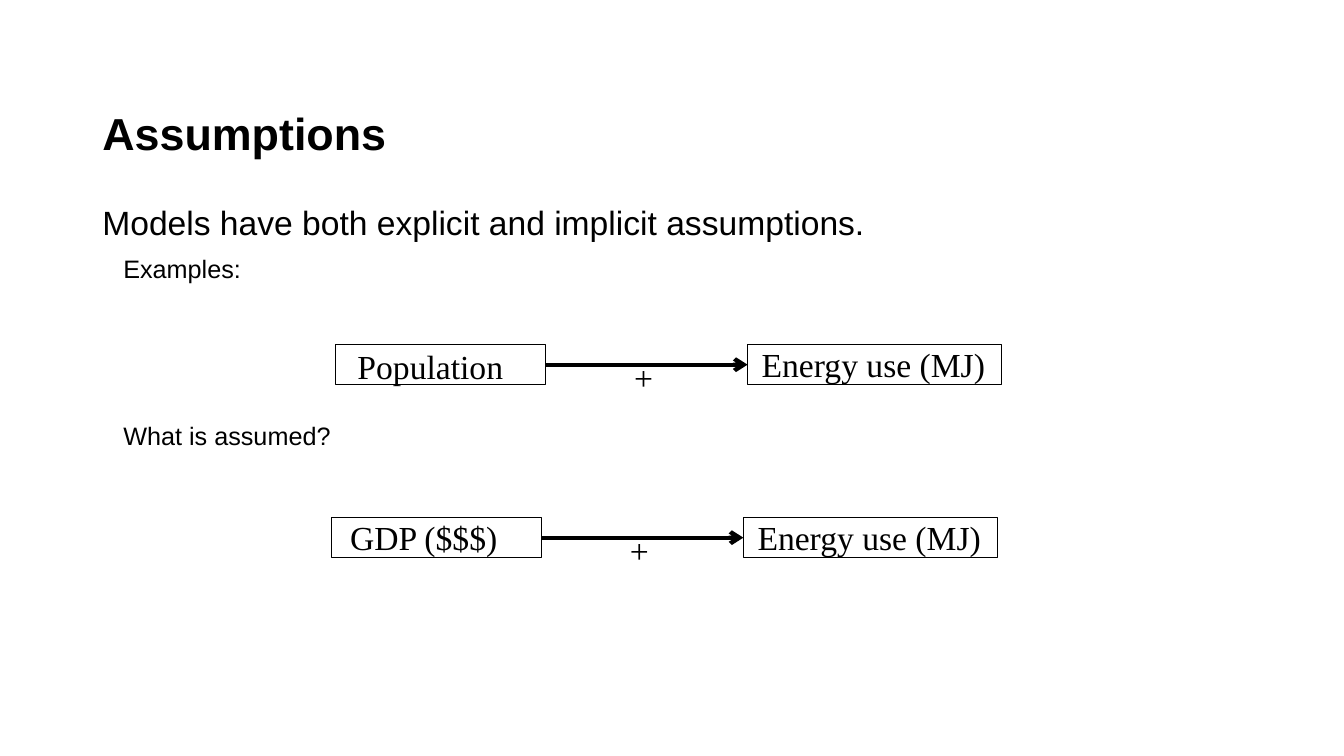
import pptx
import pptx.dml.color
import pptx.enum.shapes
import pptx.enum.text
import pptx.oxml
import pptx.oxml.ns
import pptx.util

COLUMNS, ROWS = 320, 180
BLACK = "000000"

presentation = pptx.Presentation()
presentation.slide_width = pptx.util.Inches(13.33)
presentation.slide_height = pptx.util.Inches(7.5)
CELL = presentation.slide_width / COLUMNS
slide = presentation.slides.add_slide(presentation.slide_layouts[6])


def color(hex_string):
    return pptx.dml.color.RGBColor.from_string(hex_string)


def add_text(left, top, width, height, lines, font_name, wrap=True, anchor="TOP"):
    """Place a text box in grid cells; each line is (text, size, bold, indent, space before)."""
    box = slide.shapes.add_textbox(*[round(n * CELL) for n in (left, top, width, height)])
    frame = box.text_frame
    frame.word_wrap = wrap
    frame.vertical_anchor = pptx.enum.text.MSO_ANCHOR[anchor]
    for index, (text, size, bold, indent, space_before) in enumerate(lines):
        paragraph = frame.add_paragraph() if index else frame.paragraphs[0]
        if indent:
            properties = paragraph._p.get_or_add_pPr()
            properties.set("marL", str(round(indent * CELL)))
            properties.set("indent", "0")
        if wrap:
            paragraph.line_spacing = 0.9
        if space_before:
            paragraph.space_before = pptx.util.Pt(space_before)
        run = paragraph.add_run()
        run.text = text
        run.font.name = font_name
        run.font.size = pptx.util.Pt(size)
        run.font.bold = bold
        run.font.color.rgb = color(BLACK)
    return frame


add_text(22, 9.6, 276, 29.8, [("Assumptions", 32, True, 0, 0)], "Arial", anchor="BOTTOM")
add_text(22, 48, 276, 114.2, [
    ("Models have both explicit and implicit assumptions.", 24, False, 0, 0),
    ("Examples:", 18, False, 5, 10),
    ("What is assumed?", 18, False, 5, 100),
], "Arial")

# Each relation: cause, label offset and width, left and top of its row
relations = [
    ("Population", 2, 41.5, 80, 82),
    ("GDP ($$$)", 2, 40.3, 79, 123.2),
]
BOX_HEIGHT = 9.7
CAUSE_WIDTH, EFFECT_WIDTH, ARROW_LENGTH = 50, 60.5, 48

for cause, label_offset, label_width, left, top in relations:
    arrow_start = left + CAUSE_WIDTH
    effect_left = arrow_start + ARROW_LENGTH
    middle = top + BOX_HEIGHT / 2

    for box_left, box_width in ((left, CAUSE_WIDTH), (effect_left, EFFECT_WIDTH)):
        box = slide.shapes.add_shape(
            pptx.enum.shapes.MSO_SHAPE.RECTANGLE,
            *[round(n * CELL) for n in (box_left, top, box_width, BOX_HEIGHT)])
        box.shadow.inherit = False
        box.fill.background()
        box.line.color.rgb = color(BLACK)
        box.line.width = pptx.util.Pt(0.75)

    arrow = slide.shapes.add_connector(
        pptx.enum.shapes.MSO_CONNECTOR.STRAIGHT,
        *[round(n * CELL) for n in (arrow_start, middle, effect_left, middle)])
    arrow.line.color.rgb = color(BLACK)
    arrow.line.width = pptx.util.Pt(3)
    head = pptx.oxml.parse_xml(
        f'<a:tailEnd {pptx.oxml.ns.nsdecls("a")} type="arrow"/>')
    arrow.line._get_or_add_ln().append(head)
    arrow._element.spPr.append(
        pptx.oxml.parse_xml(f'<a:effectLst {pptx.oxml.ns.nsdecls("a")}/>'))

    labels = [
        (cause, left + label_offset, top - 1.2, label_width),
        ("Energy use (MJ)", effect_left + 1, top - 1.2, 58.6),
        ("+", arrow_start + 18.6, top + 1.8, 9.4),
    ]
    for text, label_left, label_top, width in labels:
        frame = add_text(label_left, label_top, width, 12,
                         [(text, 24, False, 0, 0)], "Times New Roman", wrap=False)
        if text == "Population":
            frame.margin_left = frame.margin_right = pptx.util.Inches(0.13)
            frame.margin_top = frame.margin_bottom = pptx.util.Inches(0.07)

presentation.save("out.pptx")
